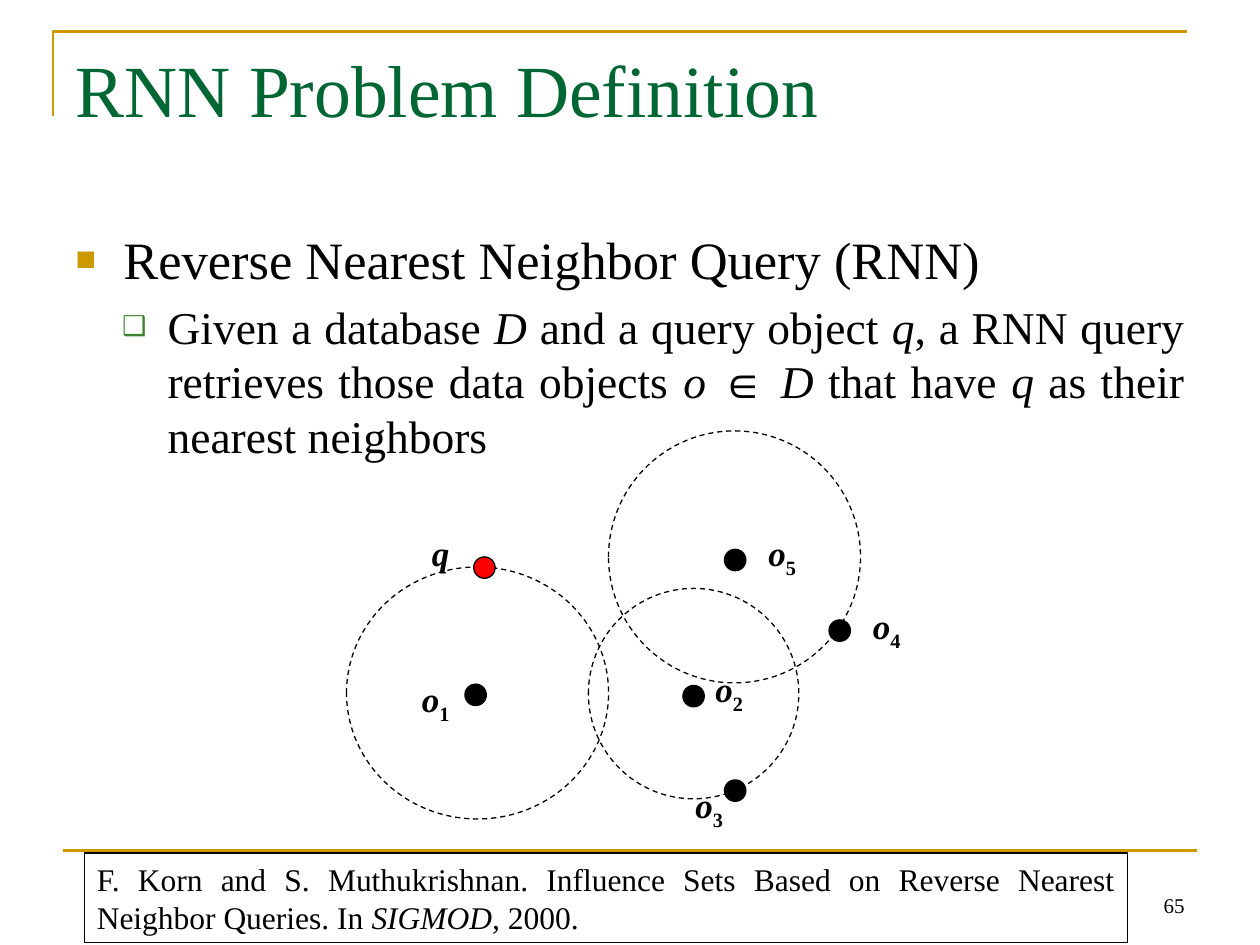
from dataclasses import dataclass

from lxml import etree
from pptx import Presentation
from pptx.dml.color import RGBColor
from pptx.enum.dml import MSO_LINE
from pptx.enum.shapes import MSO_CONNECTOR, MSO_SHAPE
from pptx.enum.text import MSO_ANCHOR, MSO_AUTO_SIZE, PP_ALIGN
from pptx.oxml.ns import qn
from pptx.util import Inches, Pt

FONT = "Times New Roman"
BLACK, WHITE, RED = "000000", "FFFFFF", "FF0000"
GOLD, TITLE_GREEN, BULLET_GREEN = "CC9900", "006633", "3B812F"
OVAL, RECTANGLE = MSO_SHAPE.OVAL, MSO_SHAPE.RECTANGLE
STRAIGHT, DASH = MSO_CONNECTOR.STRAIGHT, MSO_LINE.DASH
TOP, MIDDLE, BOTTOM = MSO_ANCHOR.TOP, MSO_ANCHOR.MIDDLE, MSO_ANCHOR.BOTTOM
LEFT, RIGHT, JUSTIFY = PP_ALIGN.LEFT, PP_ALIGN.RIGHT, PP_ALIGN.JUSTIFY
NO_AUTOFIT = MSO_AUTO_SIZE.NONE
DOT_SIZE = 0.17


@dataclass
class DataPoint:
    name: str
    subscript: str
    dot: tuple[float, float]
    label: tuple[float, float]
    color: str = BLACK


@dataclass
class Neighborhood:
    left: float
    top: float
    width: float
    height: float


POINTS = [
    DataPoint("q", "", (3.76, 4.42), (3.33, 4.17), RED),
    DataPoint("o", "1", (3.69, 5.43), (3.25, 5.33)),
    DataPoint("o", "2", (5.42, 5.44), (5.58, 5.25)),
    DataPoint("o", "3", (5.75, 6.19), (5.42, 6.17)),
    DataPoint("o", "4", (6.58, 4.92), (6.83, 4.75)),
    DataPoint("o", "5", (5.75, 4.36), (6, 4.17)),
]
NEIGHBORHOODS = [
    Neighborhood(2.75, 4.5, 2.08, 2),
    Neighborhood(4.67, 4.67, 1.67, 1.67),
    Neighborhood(4.83, 3.42, 2, 2),
]


def rgb(color: str) -> RGBColor:
    return RGBColor.from_string(color)


def write(paragraph, text: str, *, size: float, color: str = BLACK,
          align=LEFT, bold: bool = False, italic: bool = False,
          subscript: bool = False) -> None:
    """Add text to a paragraph; parts between asterisks flip the italics."""
    paragraph.alignment = align
    for index, part in enumerate(text.split("*")):
        if not part:
            continue
        run = paragraph.add_run()
        run.text = part
        font = run.font
        font.name, font.size, font.bold = FONT, Pt(size), bold
        font.italic = italic != (index % 2 == 1)
        font.color.rgb = rgb(color)
        if subscript:
            run._r.get_or_add_rPr().set("baseline", "-25000")


def place(shape, left: float, top: float, width: float, height: float) -> None:
    shape.left, shape.top = Inches(left), Inches(top)
    shape.width, shape.height = Inches(width), Inches(height)


def set_frame(shape, anchor, wrap: bool = True):
    frame = shape.text_frame
    frame.auto_size = NO_AUTOFIT
    frame.word_wrap = wrap
    frame.vertical_anchor = anchor
    return frame


def add_text_box(slide, left: float, top: float, width: float, height: float,
                 anchor=TOP, wrap: bool = True):
    box = slide.shapes.add_textbox(
        Inches(left), Inches(top), Inches(width), Inches(height))
    return set_frame(box, anchor, wrap).paragraphs[0]


def add_outlined(slide, preset, left: float, top: float, width: float,
                 height: float, fill: str | None = None, dash=None):
    shape = slide.shapes.add_shape(
        preset, Inches(left), Inches(top), Inches(width), Inches(height))
    shape.shadow.inherit = False
    if fill is None:
        shape.fill.background()
    else:
        shape.fill.solid()
        shape.fill.fore_color.rgb = rgb(fill)
    shape.line.color.rgb = rgb(BLACK)
    shape.line.width = Pt(0.75)
    if dash is not None:
        shape.line.dash_style = dash
    return shape


def set_bullet(paragraph, char: str, color: str, percent: int,
               margin: float, hanging: float) -> None:
    props = paragraph._p.get_or_add_pPr()
    props.set("marL", str(Inches(margin)))
    props.set("indent", str(-Inches(hanging)))
    spacing = etree.SubElement(props, qn("a:spcBef"))
    etree.SubElement(spacing, qn("a:spcPct"), val="20000")
    bullet_color = etree.SubElement(props, qn("a:buClr"))
    etree.SubElement(bullet_color, qn("a:srgbClr"), val=color)
    etree.SubElement(props, qn("a:buSzPct"), val=str(percent * 1000))
    etree.SubElement(props, qn("a:buChar"), char=char)


def add_frame_lines(slide) -> None:
    builder = slide.shapes.build_freeform(Inches(0.42), Inches(0.92))
    builder.add_line_segments(
        [(Inches(0.42), Inches(0.25)), (Inches(9.42), Inches(0.25))], close=False)
    corner = builder.convert_to_shape()
    corner.shadow.inherit = False
    corner.fill.background()
    footer_rule = slide.shapes.add_connector(
        STRAIGHT, Inches(0.5), Inches(6.75), Inches(9.5), Inches(6.75))
    etree.SubElement(footer_rule._element.spPr, qn("a:effectLst"))
    for rule in (corner, footer_rule):
        rule.line.color.rgb = rgb(GOLD)
        rule.line.width = Pt(1.5)


def add_point(slide, point: DataPoint) -> None:
    add_outlined(slide, OVAL, *point.dot, DOT_SIZE, DOT_SIZE, fill=point.color)
    width = 0.43 if point.subscript else 0.34
    label = add_text_box(slide, *point.label, width, 0.43, wrap=False)
    write(label, point.name, size=20, bold=True, italic=True)
    write(label, point.subscript, size=20, bold=True, subscript=True)


def main() -> None:
    prs = Presentation()
    prs.slide_width, prs.slide_height = Inches(10), Inches(7.5)
    slide = prs.slides.add_slide(prs.slide_layouts[1])
    title, body = slide.placeholders

    # Frame lines and slide number
    add_frame_lines(slide)
    number = add_text_box(slide, 7.17, 6.83, 2.33, 0.5, anchor=BOTTOM)
    write(number, "65", size=12, align=RIGHT)

    # Title and definition
    place(title, 0.5, 0.3, 9, 1.25)
    write(set_frame(title, TOP).paragraphs[0], "RNN Problem Definition",
          size=42, color=TITLE_GREEN)
    place(body, 0.5, 1.75, 9, 4.95)
    body_frame = set_frame(body, TOP)
    topic = body_frame.paragraphs[0]
    set_bullet(topic, "■", GOLD, 65, 0.38, 0.38)
    write(topic, "Reverse Nearest Neighbor Query (RNN)", size=30)
    definition = body_frame.add_paragraph()
    definition.level = 1
    set_bullet(definition, "❑", BULLET_GREEN, 60, 0.73, 0.36)
    write(definition,
          "Given a database *D* and a query object *q*, a RNN query retrieves "
          "those data objects *o* ∈ *D* that have *q* as their nearest neighbors",
          size=26, align=JUSTIFY)

    # Nearest-neighbor circles, then the points on top
    for area in NEIGHBORHOODS:
        add_outlined(slide, OVAL, area.left, area.top, area.width, area.height,
                     dash=DASH)
    for point in POINTS:
        add_point(slide, point)

    # Reference
    reference = add_outlined(slide, RECTANGLE, 0.67, 6.77, 8.28, 0.71, fill=WHITE)
    write(set_frame(reference, MIDDLE).paragraphs[0],
          "F. Korn and S. Muthukrishnan. Influence Sets Based on Reverse Nearest "
          "Neighbor Queries. In *SIGMOD, *2000.", size=18, align=JUSTIFY)

    prs.save("out.pptx")


if __name__ == "__main__":
    main()
